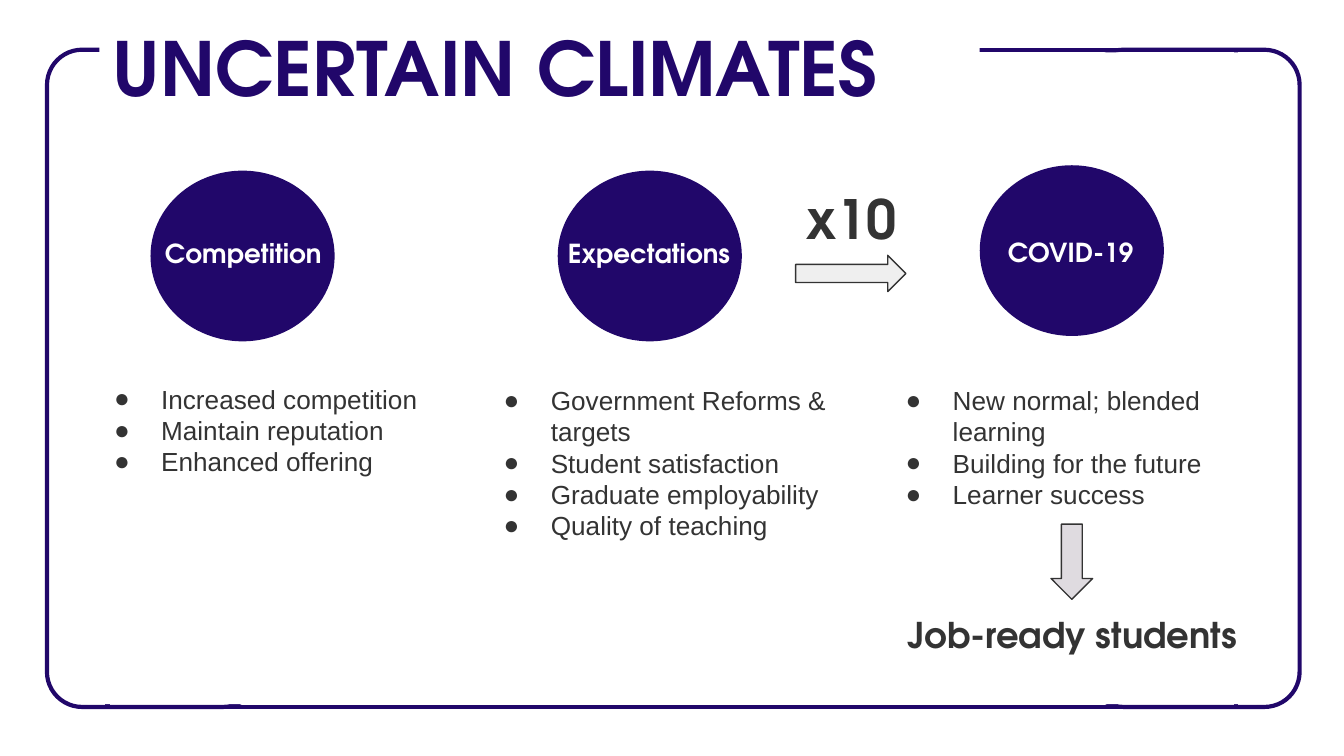
import dataclasses

import pptx
import pptx.dml.color
import pptx.enum.shapes
import pptx.enum.text
import pptx.oxml.ns
import pptx.util
from lxml import etree

EMU_PER_PX = 9144  # 100 px to the inch
SHAPES = pptx.enum.shapes.MSO_SHAPE
ALIGN = pptx.enum.text.PP_ALIGN
INSET = 10


@dataclasses.dataclass(frozen=True)
class Theme:
    display: str = "TeX Gyre Adventor"
    body: str = "Arial"
    navy: str = "21076A"
    ink: str = "333333"
    white: str = "FFFFFF"
    light_arrow: str = "EFEFEF"
    mauve_arrow: str = "DFDBE0"
    title_size: int = 40
    multiplier_size: int = 29
    outcome_size: int = 19
    text_size: int = 14
    frame_line: float = 2.25
    arrow_line: float = 0.75


THEME = Theme()

# circle box, label, label box, label alignment, left inset of the label,
# list box, list items
COLUMNS = [
    ((112, 127, 137, 127), "Competition", (60, 167, 192, 56), ALIGN.CENTER, 60,
     (60, 275, 269, 197),
     ["Increased competition", "Maintain reputation", "Enhanced offering"]),
    ((415, 127, 137, 127), "Expectations", (406, 167, 154, 74), ALIGN.CENTER,
     INSET, (350, 276, 287, 196),
     ["Government Reforms & targets", "Student satisfaction",
      "Graduate employability", "Quality of teaching"]),
    ((729, 123, 137, 127), "COVID-19", (740, 166, 118, 40), ALIGN.LEFT, INSET,
     (649, 276, 281, 195),
     ["New normal; blended learning", "Building for the future",
      "Learner success"]),
]


def px(length):
    return pptx.util.Emu(length * EMU_PER_PX)


def rgb(color):
    return pptx.dml.color.RGBColor.from_string(color)


def add_shape(slide, kind, box, fill=None, line=None, line_width=0):
    shape = slide.shapes.add_shape(kind, *map(px, box))
    shape.shadow.inherit = False
    if fill:
        shape.fill.solid()
        shape.fill.fore_color.rgb = rgb(fill)
    else:
        shape.fill.background()
    if line:
        shape.line.color.rgb = rgb(line)
        shape.line.width = pptx.util.Pt(line_width)
    else:
        shape.line.fill.background()
    return shape


def add_text(slide, box, lines, size, color, font=THEME.display, bold=True,
             align=ALIGN.LEFT, left_inset=INSET):
    text_box = slide.shapes.add_textbox(*map(px, box))
    frame = text_box.text_frame
    frame.word_wrap = True
    frame.margin_left = px(left_inset)
    frame.margin_right = frame.margin_top = frame.margin_bottom = px(INSET)
    frame.text = "\n".join(lines)
    for paragraph in frame.paragraphs:
        paragraph.alignment = align
        paragraph.font.name = font
        paragraph.font.size = pptx.util.Pt(size)
        paragraph.font.bold = bold
        paragraph.font.color.rgb = rgb(color)
    return text_box


def add_bullet(paragraph, indent=50, hang=35):
    qn = pptx.oxml.ns.qn
    properties = paragraph._p.get_or_add_pPr()
    properties.set("marL", str(px(indent)))
    properties.set("indent", str(px(-hang)))
    color = etree.Element(qn("a:buClr"))
    etree.SubElement(color, qn("a:srgbClr"), val=THEME.ink)
    font = etree.Element(qn("a:buFont"), typeface=THEME.body)
    character = etree.Element(qn("a:buChar"), char="●")
    for element in (color, font, character):
        properties.insert_element_before(element, "a:tabLst", "a:defRPr",
                                         "a:extLst")


def add_bullet_list(slide, box, items):
    text_box = add_text(slide, box, items, THEME.text_size, THEME.ink,
                        font=THEME.body, bold=False)
    for paragraph in text_box.text_frame.paragraphs:
        add_bullet(paragraph)


def add_frame(slide):
    """Rounded ends joined by a rectangle, with the inner lines covered."""
    for left in (35, 810):
        add_shape(slide, SHAPES.FLOWCHART_ALTERNATE_PROCESS,
                  (left, 37, 157, 489), THEME.white, THEME.navy,
                  THEME.frame_line)
    add_shape(slide, SHAPES.RECTANGLE, (80, 37, 840, 489),
              line=THEME.navy, line_width=THEME.frame_line)
    add_shape(slide, SHAPES.RECTANGLE, (65, 39, 870, 485), THEME.white)


def add_title(slide):
    """The white fill opens a gap in the frame behind the title."""
    title = add_text(slide, (74, 6, 655, 93), ["UNCERTAIN CLIMATES"],
                     THEME.title_size, THEME.navy)
    title.fill.solid()
    title.fill.fore_color.rgb = rgb(THEME.white)


def add_column(slide, circle, label, label_box, align, left_inset, list_box,
               items):
    add_shape(slide, SHAPES.OVAL, circle, THEME.navy)
    add_text(slide, label_box, [label], THEME.text_size, THEME.white,
             align=align, left_inset=left_inset)
    add_bullet_list(slide, list_box, items)


def add_arrow(slide, kind, box, fill):
    add_shape(slide, kind, box, fill, THEME.ink, THEME.arrow_line)


def main():
    presentation = pptx.Presentation()
    presentation.slide_width = px(1000)
    presentation.slide_height = presentation.slide_width * 9 // 16
    slide = presentation.slides.add_slide(presentation.slide_layouts[6])

    add_frame(slide)
    add_title(slide)
    for column in COLUMNS:
        add_column(slide, *column)
    add_text(slide, (590, 128, 101, 88), ["x10"],
             THEME.multiplier_size, THEME.ink)
    add_arrow(slide, SHAPES.RIGHT_ARROW, (592, 190, 82, 27), THEME.light_arrow)
    add_text(slide, (625, 446, 346, 40), ["Job-ready students"],
             THEME.outcome_size, THEME.ink, align=ALIGN.CENTER)
    add_arrow(slide, SHAPES.DOWN_ARROW, (782, 390, 31, 56), THEME.mauve_arrow)

    presentation.save("out.pptx")


if __name__ == "__main__":
    main()
